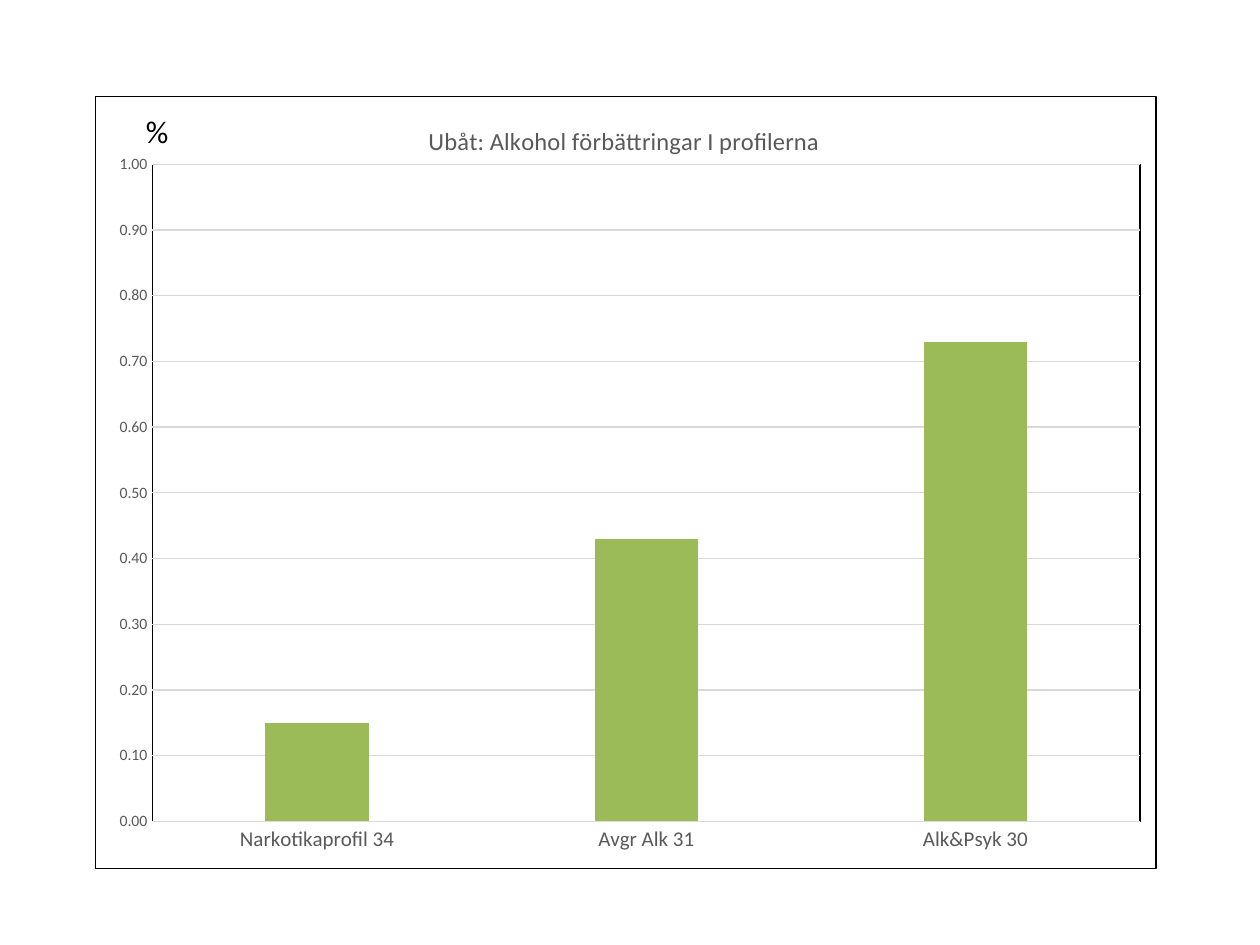
"""Build a slide with a column chart of alcohol improvements per profile."""
from dataclasses import dataclass

from lxml import etree
from pptx import Presentation
from pptx import util as u
from pptx.chart.data import CategoryChartData
from pptx.dml.color import RGBColor
from pptx.enum import chart as c
from pptx.enum import text as t
from pptx.oxml.ns import nsdecls, qn


@dataclass(frozen=True)
class Theme:
    font: str = "Calibri"
    ink: str = "000000"
    muted: str = "595959"
    grid: str = "D9D9D9"
    bar: str = "9BBB59"
    paper: str = "FFFFFF"
    line: float = 0.75
    base_size: int = 10
    value_size: int = 9
    category_size: int = 12
    title_size: int = 14
    unit_size: int = 18


def apply(target, values):
    for name, value in values.items():
        setattr(target, name, value)


class SlideBuilder:
    def __init__(self, slide, theme):
        self.slide = slide
        self.theme = theme

    def style_font(self, font, size, color):
        apply(font, {"name": self.theme.font, "size": u.Pt(size), "bold": False})
        font.color.rgb = RGBColor.from_string(color)

    def style_line(self, line, color):
        line.color.rgb = RGBColor.from_string(color)
        line.width = u.Pt(self.theme.line)

    def frame(self, fill):
        return etree.fromstring(
            f'<c:spPr {nsdecls("c", "a")}>{fill}'
            f'<a:ln w="{u.Pt(self.theme.line)}"><a:solidFill>'
            f'<a:srgbClr val="{self.theme.ink}"/></a:solidFill></a:ln></c:spPr>')

    def place(self, parent, position, index, inner=False):
        for old in parent.findall(qn("c:layout")):
            parent.remove(old)
        target = '<c:layoutTarget val="inner"/>' if inner else ""
        modes = "".join(f'<c:{key}Mode val="edge"/>' for key in "xy")
        values = "".join(f'<c:{key} val="{value}"/>' for key, value in position.items())
        parent.insert(index, etree.fromstring(
            f'<c:layout {nsdecls("c")}><c:manualLayout>{target}{modes}{values}'
            f'</c:manualLayout></c:layout>'))

    def text(self, words, left, top, width, height):
        shape = self.slide.shapes.add_textbox(*map(u.Inches, (left, top, width, height)))
        apply(shape.text_frame, {
            "word_wrap": False, "auto_size": t.MSO_AUTO_SIZE.SHAPE_TO_FIT_TEXT})
        run = shape.text_frame.paragraphs[0].add_run()
        run.text = words
        self.style_font(run.font, self.theme.unit_size, self.theme.ink)

    def column_chart(self, title, values, left, top, width, height):
        theme = self.theme
        data = CategoryChartData(number_format="#,##0.00")
        data.categories = list(values)
        data.add_series("Series 1", list(values.values()))
        chart = self.slide.shapes.add_chart(
            c.XL_CHART_TYPE.COLUMN_CLUSTERED,
            *map(u.Inches, (left, top, width, height)), data).chart
        apply(chart, {"has_legend": False, "has_title": True})
        self.style_font(chart.font, theme.base_size, theme.ink)

        chart.chart_title.include_in_layout = False
        run = chart.chart_title.text_frame.paragraphs[0].add_run()
        run.text = title
        self.style_font(run.font, theme.title_size, theme.muted)

        plot = chart.plots[0]
        apply(plot, {"gap_width": 219, "overlap": -27, "vary_by_categories": False})
        fill = plot.series[0].format.fill
        fill.solid()
        fill.fore_color.rgb = RGBColor.from_string(theme.bar)

        no_ticks = {"major_tick_mark": c.XL_TICK_MARK.NONE,
                    "minor_tick_mark": c.XL_TICK_MARK.NONE}
        sizes = {chart.category_axis: theme.category_size,
                 chart.value_axis: theme.value_size}
        for axis, size in sizes.items():
            apply(axis, no_ticks)
            self.style_font(axis.tick_labels.font, size, theme.muted)
        apply(chart.value_axis, {"minimum_scale": 0, "maximum_scale": 1,
                                 "major_unit": 0.1, "has_major_gridlines": True})
        apply(chart.value_axis.tick_labels, {
            "number_format": "#,##0.00", "number_format_is_linked": False})
        chart.value_axis.format.line.fill.background()
        self.style_line(chart.category_axis.format.line, theme.grid)
        self.style_line(chart.value_axis.major_gridlines.format.line, theme.grid)

        root = chart._chartSpace.find(qn("c:chart"))
        plot_area = root.find(qn("c:plotArea"))
        self.place(root.find(qn("c:title")), {"x": 0.31, "y": 0.03}, 1)
        self.place(plot_area, {"x": 0.054, "y": 0.088, "w": 0.931, "h": 0.851}, 0, True)
        plot_area.append(self.frame("<a:noFill/>"))
        root.addnext(self.frame(
            f'<a:solidFill><a:srgbClr val="{theme.paper}"/></a:solidFill>'))


def main():
    presentation = Presentation()
    apply(presentation, {"slide_width": u.Inches(10), "slide_height": u.Inches(7.5)})
    slide = presentation.slides.add_slide(presentation.slide_layouts[6])
    builder = SlideBuilder(slide, Theme())
    builder.column_chart(
        "Ubåt: Alkohol förbättringar I profilerna",
        {"Narkotikaprofil 34": 0.15, "Avgr Alk 31": 0.43, "Alk&Psyk 30": 0.73},
        0.75, 0.76, 8.43, 6.14)
    builder.text("%", 1.06, 0.84, 0.38, 0.4)
    presentation.save("out.pptx")


if __name__ == "__main__":
    main()
